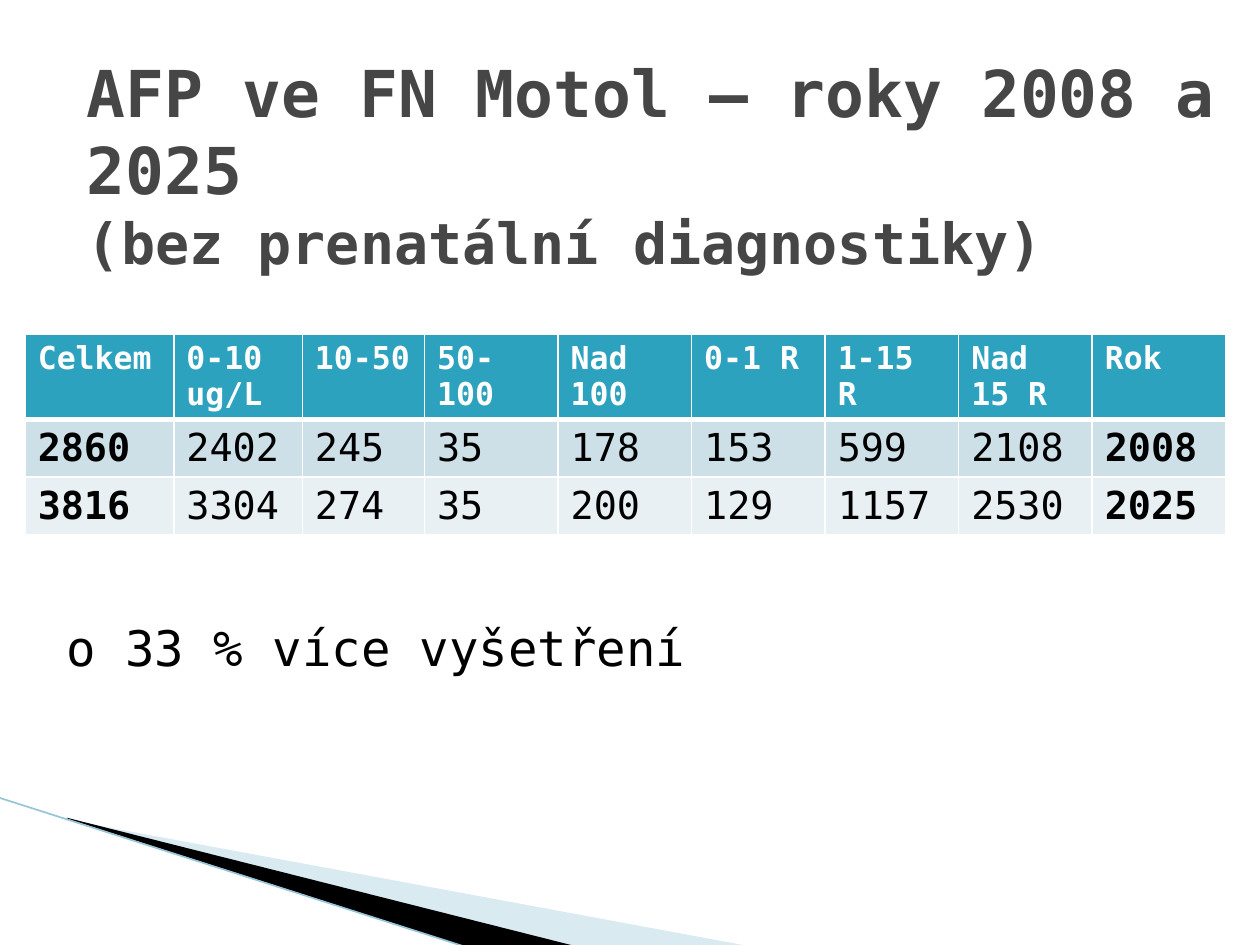
from dataclasses import dataclass

from lxml.etree import SubElement
from pptx import Presentation
from pptx.dml.color import RGBColor as RGB
from pptx.enum.shapes import MSO_CONNECTOR as Connector
from pptx.enum.text import MSO_ANCHOR as Anchor, MSO_AUTO_SIZE as AutoSize, PP_ALIGN as Align
from pptx.oxml.ns import qn
from pptx.util import Inches, Pt


@dataclass(frozen=True)
class Theme:
    """Colours, font and type sizes of the slide."""
    font: str = "DejaVu Sans Mono"
    title: str = "464646"
    text: str = "000000"
    white: str = "FFFFFF"
    header: str = "2DA2BF"
    rows: tuple = ("CDE0E8", "E8F0F4")
    band: str = "A0CBDC"
    edge: str = "97C5D8"
    title_size: float = 36.9
    subtitle_size: float = 32.4
    header_size: float = 18
    cell_size: float = 22
    note_size: float = 28


THEME = Theme()
HEADERS = ["Celkem", "0-10 ug/L", "10-50", "50-100", "Nad 100", "0-1 R", "1-15 R", "Nad 15 R", "Rok"]
RESULTS = [
    ["2860", "2402", "245", "35", "178", "153", "599", "2108", "2008"],
    ["3816", "3304", "274", "35", "200", "129", "1157", "2530", "2025"],
]
COLUMN_WIDTHS = [1.18, 1.02, 0.97] + [1.06] * 6
ROW_HEIGHTS = [0.67, 0.45, 0.45]


def format_run(r, size, color, bold=False):
    """Apply the theme font with the given size, colour and weight."""
    for name, value in {"name": THEME.font, "size": Pt(size), "bold": bold}.items():
        setattr(r.font, name, value)
    r.font.color.rgb = RGB.from_string(color)


def place(sp, box):
    """Move a shape to a box of left, top, width and height in inches."""
    for name, value in zip(("left", "top", "width", "height"), box):
        setattr(sp, name, Inches(value))


def add_band(s, box, points, color, opacity=100):
    """Draw a filled wedge whose points are relative to the box."""
    left, top = box[:2]
    corners = [(Inches(left + x), Inches(top + y)) for x, y in points]
    builder = s.shapes.build_freeform(*corners[0])
    builder.add_line_segments(corners[1:], close=True)
    sp = builder.convert_to_shape()
    sp.shadow.inherit = False
    sp.fill.solid()
    sp.fill.fore_color.rgb = RGB.from_string(color)
    sp.line.fill.background()
    if opacity < 100:
        fill = sp.fill._xPr.find(qn("a:solidFill"))
        SubElement(fill[0], qn("a:alpha"), val=str(opacity * 1000))


def add_corner(s, box):
    """Draw the two wedges and the edge line of the lower left corner."""
    left, top, width, height = box
    add_band(s, box, [(0.56, 0.18), (5.96, 1.18), (4.57, 1.18), (0.56, 0.17)], THEME.band, 40)
    add_band(s, box, [(0.54, 0.16), (4.58, 1.18), (3.73, 1.19), (0.55, 0.17)], THEME.text)
    edge = s.shapes.add_connector(
        Connector.STRAIGHT, Inches(left), Inches(top), Inches(left + 3.72), Inches(top + height))
    edge.line.color.rgb = RGB.from_string(THEME.edge)
    edge.line.width = Pt(0.95)
    SubElement(edge._element.spPr, qn("a:effectLst"))


def add_title(s, box):
    """Fill the title placeholder with the heading and its smaller second part."""
    sp = s.shapes.title
    place(sp, box)
    tf = sp.text_frame
    for name, value in {"word_wrap": True, "auto_size": AutoSize.NONE,
                        "vertical_anchor": Anchor.MIDDLE}.items():
        setattr(tf, name, value)
    p = tf.paragraphs[0]
    p.alignment = Align.LEFT
    r = p.add_run()
    r.text = "AFP ve FN Motol – roky 2008 a 2025 "
    format_run(r, THEME.title_size, THEME.title, True)
    p.add_line_break()
    r = p.add_run()
    r.text = "(bez prenatální diagnostiky)"
    format_run(r, THEME.subtitle_size, THEME.title, True)


def set_borders(cell, widths):
    """Give a cell white borders of the widths keyed by side."""
    tc_pr = cell._tc.get_or_add_tcPr()
    for side, width in widths.items():
        ln = SubElement(tc_pr, qn(f"a:ln{side}"), w=str(Pt(width)))
        SubElement(SubElement(ln, qn("a:solidFill")), qn("a:srgbClr"), val=THEME.white)


def add_results(s, box):
    """Add the table of test counts for both years."""
    data = [HEADERS] + RESULTS
    table = s.shapes.add_table(len(data), len(HEADERS), *map(Inches, box)).table
    for column, width in zip(table.columns, COLUMN_WIDTHS):
        column.width = Inches(width)
    for row, height in zip(table.rows, ROW_HEIGHTS):
        row.height = Inches(height)
    for i, values in enumerate(data):
        is_header = i == 0
        fill = THEME.header if is_header else THEME.rows[i - 1]
        size = THEME.header_size if is_header else THEME.cell_size
        color = THEME.white if is_header else THEME.text
        borders = {"L": 1, "R": 1, "T": 3 if i == 1 else 1, "B": 3 if is_header else 1}
        for j, value in enumerate(values):
            cell = table.cell(i, j)
            set_borders(cell, borders)
            cell.fill.solid()
            cell.fill.fore_color.rgb = RGB.from_string(fill)
            r = cell.text_frame.paragraphs[0].add_run()
            r.text = value
            format_run(r, size, color, is_header or j in (0, len(values) - 1))


def add_note(s, box):
    """Add the remark on the growth in tests."""
    tf = s.shapes.add_textbox(*map(Inches, box)).text_frame
    tf.word_wrap = True
    tf.auto_size = AutoSize.SHAPE_TO_FIT_TEXT
    r = tf.paragraphs[0].add_run()
    r.text = "o 33 % více vyšetření"
    format_run(r, THEME.note_size, THEME.text)


def main():
    """Build the slide and save it."""
    prs = Presentation()
    prs.slide_width, prs.slide_height = Inches(10), Inches(7.5)
    s = prs.slides.add_slide(prs.slide_layouts[5])
    add_corner(s, (-0.01, 6.33, 5.96, 1.19))
    add_results(s, (0.2, 2.65, sum(COLUMN_WIDTHS), sum(ROW_HEIGHTS)))
    add_title(s, (0.59, 0.68, 9.29, 1.25))
    add_note(s, (0.43, 4.85, 9.29, 0.57))
    prs.save("out.pptx")


if __name__ == "__main__":
    main()
